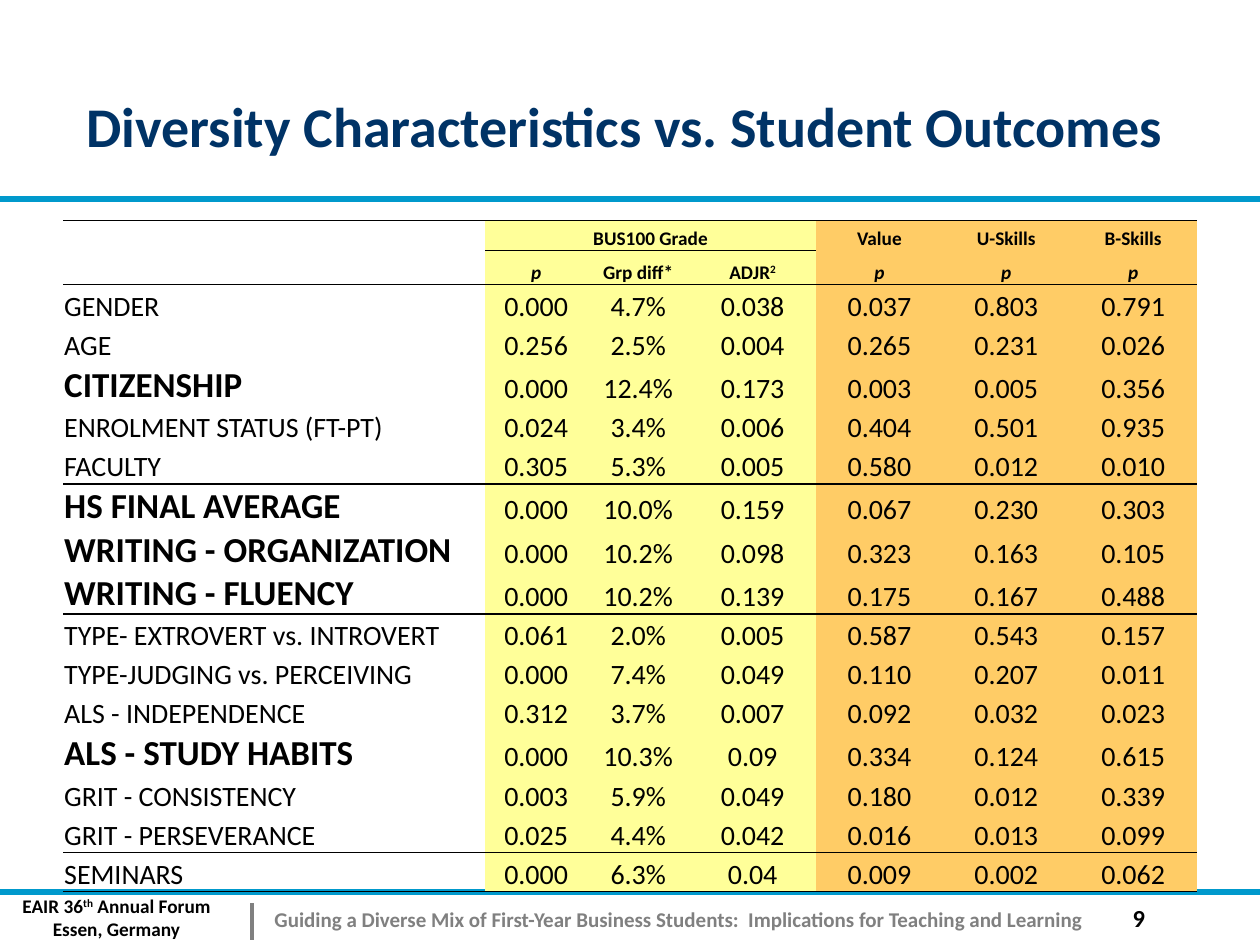
from lxml import etree
from pptx import Presentation, util as u
from pptx.dml.color import RGBColor
from pptx.enum import shapes, text
from pptx.oxml import parse_xml
from pptx.oxml.ns import nsdecls, qn

COLORS = {"black": "000000", "navy": "003366", "blue": "0099CC", "gray": "808080",
          "yellow": "FFFF99", "orange": "FFCC66"}

deck = Presentation()
deck.slide_width, deck.slide_height = u.Inches(10), u.Inches(7.5)
page = deck.slides.add_slide(deck.slide_layouts[6])
UNIT = deck.slide_width // 100  # square grid: 100 columns by 75 rows


def grid(*counts):
    return [round(count * UNIT) for count in counts]


def write(paragraph, spans, align=text.PP_ALIGN.CENTER):
    """Add spans of (wording, size, bold, color, style); style is "", "italic" or "super"."""
    paragraph.alignment = align
    for wording, size, bold, color, style in spans:
        span = paragraph.add_run()
        span.text = wording
        span.font.name, span.font.size = "Calibri", u.Pt(size)
        span.font.bold, span.font.italic = bold, style == "italic"
        span.font.color.rgb = RGBColor.from_string(COLORS[color])
        if style == "super":
            span.font._element.set("baseline", "30000")


# Rules across the page and the footer divider
for x1, y1, x2, y2, color, weight in [(0, 15.8, 100, 15.8, "blue", 3.25),
                                      (0, 70.8, 100, 70.8, "blue", 3.25),
                                      (20, 71.7, 20, 74.6, "gray", 2.75)]:
    rule = page.shapes.add_connector(shapes.MSO_CONNECTOR.STRAIGHT, *grid(x1, y1, x2, y2))
    rule.line.color.rgb = RGBColor.from_string(COLORS[color])
    rule.line.width = u.Pt(weight)
    etree.SubElement(rule._element.spPr, qn("a:effectLst"))

# Footer and title texts
frames = []
for place in [(0.5, 70.5, 17.5, 4.7), (20.8, 71.2, 77.1, 3.4), (4.2, 6.7, 90.8, 6.4)]:
    box = page.shapes.add_textbox(*grid(*place))
    box.text_frame.word_wrap = True
    frames.append(box.text_frame)
event, footer, title = frames

write(event.paragraphs[0], [("EAIR 36", 11, True, "black", ""),
                            ("th", 11, True, "black", "super"),
                            (" Annual Forum", 11, True, "black", "")])
write(event.add_paragraph(), [("Essen, Germany", 11, True, "black", "")])

# A tab stop sets the page number apart from the talk's name
tab_stops = etree.SubElement(footer.paragraphs[0]._p.get_or_add_pPr(), qn("a:tabLst"))
etree.SubElement(tab_stops, qn("a:tab"), pos=str(grid(68.1)[0]), algn="l")
write(footer.paragraphs[0], [
    ("Guiding a Diverse Mix of First-Year Business Students:  "
     "Implications for Teaching and Learning", 12, True, "gray", ""),
    ("\t9", 14, True, "black", "")], text.PP_ALIGN.LEFT)

title.vertical_anchor = text.MSO_ANCHOR.BOTTOM
write(title.paragraphs[0], [("Diversity Characteristics vs. Student Outcomes",
                             32, True, "navy", "")])

# Table contents: two header rows, then one row for each characteristic
HEADERS = [["", "BUS100 Grade", "", "", "Value", "U-Skills", "B-Skills"],
           ["", "p", "Grp diff*", "ADJR2", "p", "p", "p"]]
RESULTS = [
    ("GENDER", "0.000 4.7% 0.038 0.037 0.803 0.791"),
    ("AGE", "0.256 2.5% 0.004 0.265 0.231 0.026"),
    ("CITIZENSHIP", "0.000 12.4% 0.173 0.003 0.005 0.356"),
    ("ENROLMENT STATUS (FT-PT)", "0.024 3.4% 0.006 0.404 0.501 0.935"),
    ("FACULTY", "0.305 5.3% 0.005 0.580 0.012 0.010"),
    ("HS FINAL AVERAGE", "0.000 10.0% 0.159 0.067 0.230 0.303"),
    ("WRITING - ORGANIZATION", "0.000 10.2% 0.098 0.323 0.163 0.105"),
    ("WRITING - FLUENCY", "0.000 10.2% 0.139 0.175 0.167 0.488"),
    ("TYPE- EXTROVERT vs. INTROVERT", "0.061 2.0% 0.005 0.587 0.543 0.157"),
    ("TYPE-JUDGING vs. PERCEIVING", "0.000 7.4% 0.049 0.110 0.207 0.011"),
    ("ALS - INDEPENDENCE", "0.312 3.7% 0.007 0.092 0.032 0.023"),
    ("ALS - STUDY HABITS", "0.000 10.3% 0.09 0.334 0.124 0.615"),
    ("GRIT - CONSISTENCY", "0.003 5.9% 0.049 0.180 0.012 0.339"),
    ("GRIT - PERSEVERANCE", "0.025 4.4% 0.042 0.016 0.013 0.099"),
    ("SEMINARS", "0.000 6.3% 0.04 0.009 0.002 0.062"),
]
KEY_FACTORS = {"CITIZENSHIP", "HS FINAL AVERAGE", "WRITING - ORGANIZATION",
               "WRITING - FLUENCY", "ALS - STUDY HABITS"}
GROUP_ENDS = {1, 6, 9, 15, 16}  # rows closed by a line
rows = HEADERS + [[name, *values.split()] for name, values in RESULTS]

# Table frame
holder = page.shapes.add_table(len(rows), 7, *grid(5, 17.5, 90, 53.2))
table = holder.table
table.first_row = table.horz_banding = False
table._tbl.tblPr.find(qn("a:tableStyleId")).text = "{2D5ABB26-0587-4C30-8999-92F81FD0307C}"
for column, width in zip(table.columns, [33.5, 8.1, 8.1] + [10.07] * 4):
    column.width = grid(width)[0]
for r, row in enumerate(table.rows):
    row.height = grid([2.4, 2.7][r] if r < 2 else 3.1)[0]
table.cell(0, 0).merge(table.cell(1, 0))
table.cell(0, 1).merge(table.cell(0, 3))

# Table cells
for r, values in enumerate(rows):
    for c, value in enumerate(values):
        cell = table.cell(r, c)
        cell.vertical_anchor = text.MSO_ANCHOR.BOTTOM
        cell.margin_left = cell.margin_right = cell.margin_top = u.Inches(0.01)
        cell.margin_bottom = 0

        # Every edge is stated, so that no line is passed on to the next row
        edges = {"lnL": False, "lnR": False,
                 "lnT": r == 0 or r - 1 in GROUP_ENDS or (r == 1 and 1 <= c <= 3),
                 "lnB": r in GROUP_ENDS or (r == 0 and c <= 3)}
        for edge, drawn in edges.items():
            paint = (f'<a:solidFill><a:srgbClr val="{COLORS["black"]}"/></a:solidFill>'
                     if drawn else "<a:noFill/>")
            cell._tc.get_or_add_tcPr().append(parse_xml(
                f'<a:{edge} {nsdecls("a")} w="12700">{paint}</a:{edge}>'))
        if c == 0:
            cell.fill.background()
        else:
            cell.fill.solid()
            cell.fill.fore_color.rgb = RGBColor.from_string(
                COLORS["yellow" if c <= 3 else "orange"])

        key = value in KEY_FACTORS
        size = 11 if r < 2 else 20 if key else 16
        paragraph = cell.text_frame.paragraphs[0]
        if not value:  # keeps empty header cells from stretching their row
            etree.SubElement(paragraph._p, qn("a:endParaRPr"), sz=str(size * 100))
            continue
        spans = [(value, size, key or r < 2, "black", "italic" if value == "p" else "")]
        if value == "ADJR2":
            spans = [("ADJR", size, True, "black", ""), ("2", size, True, "black", "super")]
        write(paragraph, spans, text.PP_ALIGN.CENTER if c else text.PP_ALIGN.LEFT)

deck.save("out.pptx")
